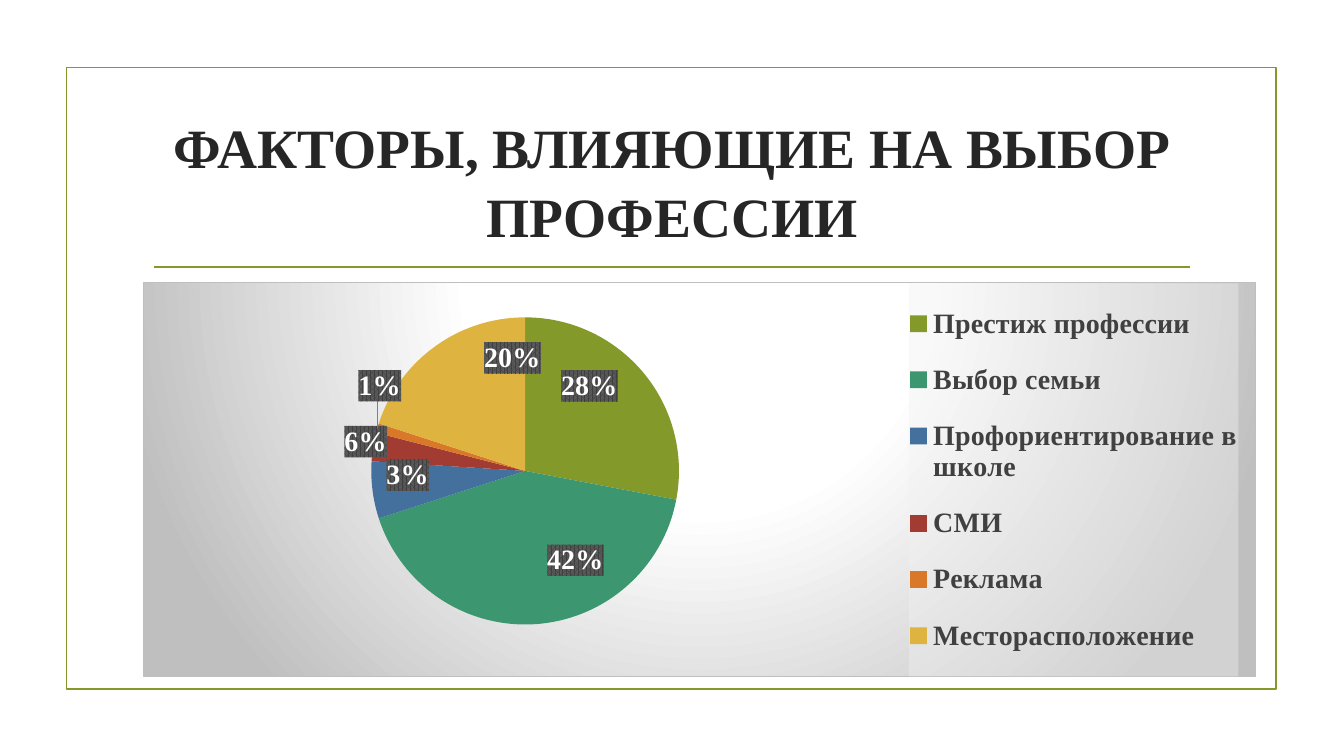
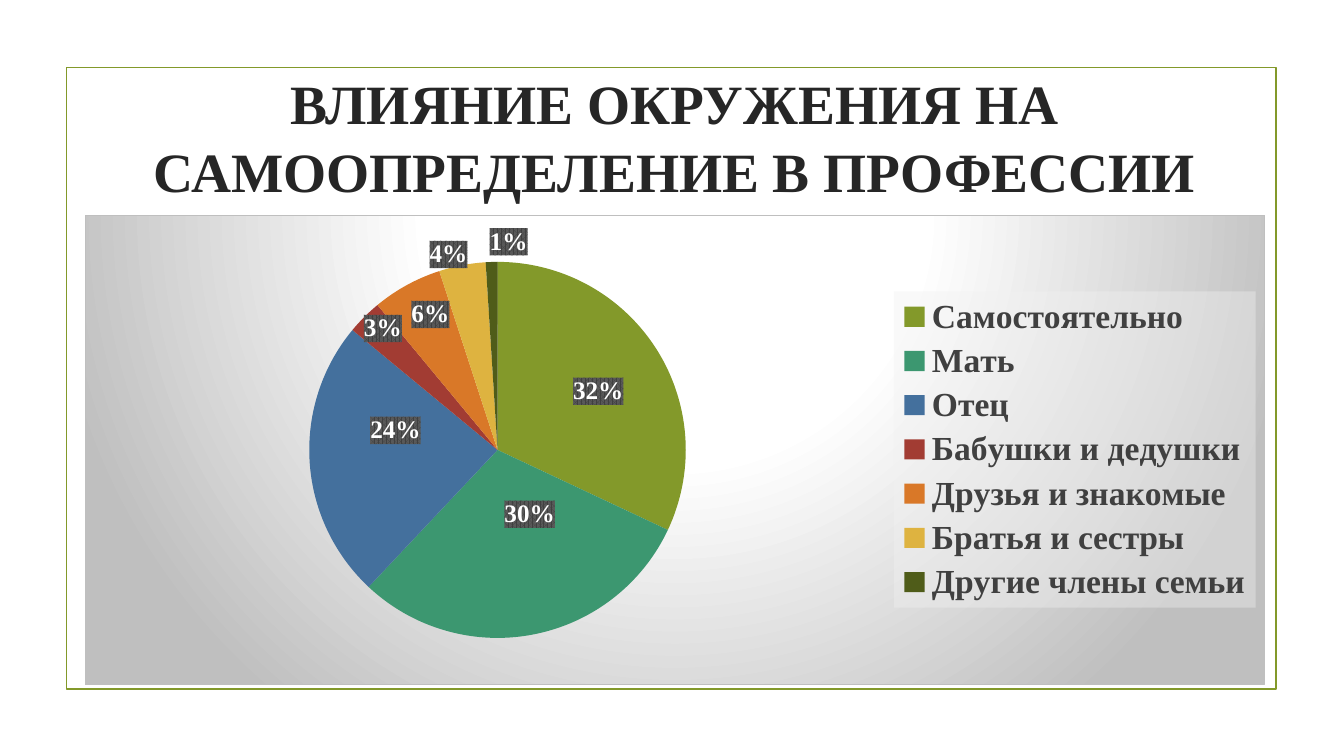
from dataclasses import dataclass
from math import cos, pi, sin

from pptx import Presentation
from pptx.chart.data import CategoryChartData
from pptx.dml.color import RGBColor
from pptx.enum.chart import XL_CHART_TYPE, XL_LEGEND_POSITION
from pptx.enum.shapes import MSO_CONNECTOR, MSO_SHAPE
from pptx.enum.text import MSO_ANCHOR, MSO_AUTO_SIZE, PP_ALIGN
from pptx.oxml import parse_xml
from pptx.oxml.ns import nsdecls, qn
from pptx.util import Pt


@dataclass(frozen=True)
class Theme:
    font: str = "Times New Roman"
    accent: str = "83992A"
    title_color: str = "262626"
    legend_color: str = "404040"
    chart_color: str = "000000"
    label_color: str = "FFFFFF"
    title_size: float = 39.6
    title_spacing: float = 1.03
    chart_size: float = 10
    line_width: float = 1.25
    slices: tuple = ("83992A", "3C9770", "44709D", "A23C33",
                     "D97828", "DEB340", "4F5C19")


# Fills that python-pptx has no public method for
PANEL_FILL = f"""<c:spPr {nsdecls('c', 'a')}>
  <a:gradFill rotWithShape="1"><a:gsLst>
    <a:gs pos="0"><a:srgbClr val="FFFFFF"/></a:gs>
    <a:gs pos="39000"><a:srgbClr val="FFFFFF"/></a:gs>
    <a:gs pos="100000"><a:srgbClr val="BFBFBF"/></a:gs></a:gsLst>
    <a:path path="circle">
      <a:fillToRect l="50000" t="-80000" r="50000" b="180000"/></a:path>
  </a:gradFill>
  <a:ln w="9525"><a:solidFill><a:srgbClr val="BFBFBF"/></a:solidFill></a:ln>
</c:spPr>"""
LEGEND_FILL = f"""<c:spPr {nsdecls('c', 'a')}>
  <a:solidFill><a:srgbClr val="F2F2F2"><a:alpha val="39000"/></a:srgbClr>
  </a:solidFill><a:ln><a:noFill/></a:ln></c:spPr>"""


def rgb(color):
    return RGBColor.from_string(color)


def set_font(font, name, size, color, bold=False):
    font.name, font.size, font.bold = name, Pt(size), bold
    font.color.rgb = rgb(color)


def area_layout(area, panel, target=""):
    """Place an area of the slide as fractions of the chart panel."""
    left, top, width, height = area
    x, y = (left - panel[0]) / panel[2], (top - panel[1]) / panel[3]
    return parse_xml(
        f'<c:layout {nsdecls("c")}><c:manualLayout>{target}'
        f'<c:xMode val="edge"/><c:yMode val="edge"/>'
        f'<c:x val="{x:.4f}"/><c:y val="{y:.4f}"/>'
        f'<c:w val="{width / panel[2]:.4f}"/><c:h val="{height / panel[3]:.4f}"/>'
        f'</c:manualLayout></c:layout>')


class Deck:
    def __init__(self, theme):
        self.theme = theme
        self.prs = Presentation()
        self.prs.slide_width, self.prs.slide_height = Pt(960), Pt(540)
        self.slide = None

    def add_slide(self):
        self.slide = self.prs.slides.add_slide(self.prs.slide_layouts[5])
        self.frame()

    def frame(self):
        border = self.slide.shapes.add_shape(
            MSO_SHAPE.RECTANGLE, Pt(47.5), Pt(48.2), Pt(864), Pt(444.2))
        border.shadow.inherit = False
        border.fill.background()
        border.line.color.rgb = rgb(self.theme.accent)
        border.line.width = Pt(self.theme.line_width)

    def title(self, text, left, top, width, height):
        title = self.slide.shapes.title
        title.left, title.top = Pt(left), Pt(top)
        title.width, title.height = Pt(width), Pt(height)
        title.text_frame.text = text
        title.text_frame.word_wrap = True
        title.text_frame.auto_size = MSO_AUTO_SIZE.NONE
        title.text_frame.vertical_anchor = MSO_ANCHOR.MIDDLE
        paragraph = title.text_frame.paragraphs[0]
        paragraph.alignment = PP_ALIGN.CENTER
        paragraph.line_spacing = self.theme.title_spacing
        set_font(paragraph.font, self.theme.font, self.theme.title_size,
                 self.theme.title_color, True)

    def rule(self, left, right, y):
        rule = self.slide.shapes.add_connector(
            MSO_CONNECTOR.STRAIGHT, Pt(left), Pt(y), Pt(right), Pt(y))
        rule.line.color.rgb = rgb(self.theme.accent)
        rule.line.width = Pt(self.theme.line_width)
        rule._element.spPr.append(parse_xml(f'<a:effectLst {nsdecls("a")}/>'))

    def pie(self, factors, panel, center, radius, legend_area,
            legend_size, label_size):
        """Each factor is a name, a value and its label's offset from the center."""
        theme = self.theme
        shares = CategoryChartData(number_format="General")
        shares.categories = [name for name, _, _ in factors]
        shares.add_series("Series 1", [value for _, value, _ in factors])
        chart = self.slide.shapes.add_chart(
            XL_CHART_TYPE.PIE, *map(Pt, panel), shares).chart
        chart.has_title = False
        set_font(chart.font, theme.font, theme.chart_size, theme.chart_color)
        chart._chartSpace.find(qn("c:txPr")).addprevious(parse_xml(PANEL_FILL))

        # Slices
        pie = chart.plots[0]
        pie.vary_by_categories = True
        series = pie.series[0]
        for index, color in enumerate(theme.slices[:len(factors)]):
            fill = series.points[index].format.fill
            fill.solid()
            fill.fore_color.rgb = rgb(color)
        plot_area = chart._chartSpace.chart.plotArea
        for layout in plot_area.findall(qn("c:layout")):
            plot_area.remove(layout)
        square = (center[0] - radius, center[1] - radius, 2 * radius, 2 * radius)
        plot_area.insert(0, area_layout(
            square, panel, '<c:layoutTarget val="inner"/>'))
        labels = self.pie_labels(factors, panel, radius, label_size)
        series._element.find(qn("c:cat")).addprevious(labels)

        # Legend
        chart.has_legend = True
        legend = chart.legend
        legend.position = XL_LEGEND_POSITION.RIGHT
        legend.include_in_layout = False
        set_font(legend.font, theme.font, legend_size, theme.legend_color, True)
        overlay = legend._element.find(qn("c:overlay"))
        overlay.addprevious(area_layout(legend_area, panel))
        overlay.addnext(parse_xml(LEGEND_FILL))

    def pie_labels(self, factors, panel, radius, size):
        """Percent labels, moved from the middle of each slice to their places."""
        theme = self.theme
        style = f"""<c:numFmt formatCode="0%" sourceLinked="0"/>
          <c:spPr><a:pattFill prst="pct75">
            <a:fgClr><a:srgbClr val="404040"/></a:fgClr>
            <a:bgClr><a:srgbClr val="595959"/></a:bgClr></a:pattFill>
            <a:ln><a:noFill/></a:ln></c:spPr>
          <c:txPr><a:bodyPr/><a:p><a:pPr><a:defRPr sz="{size * 100}" b="1">
            <a:solidFill><a:srgbClr val="{theme.label_color}"/></a:solidFill>
            <a:latin typeface="{theme.font}"/><a:cs typeface="{theme.font}"/>
            </a:defRPr></a:pPr><a:endParaRPr lang="ru-RU"/></a:p></c:txPr>
          <c:dLblPos val="ctr"/><c:showLegendKey val="0"/><c:showVal val="0"/>
          <c:showCatName val="0"/><c:showSerName val="0"/>
          <c:showPercent val="1"/><c:showBubbleSize val="0"/>"""
        total = sum(value for _, value, _ in factors)
        moved, before = "", 0
        for index, (_, value, (dx, dy)) in enumerate(factors):
            angle = 2 * pi * (before + value / 2) / total
            x = (dx - radius / 2 * sin(angle)) / panel[2]
            y = (dy + radius / 2 * cos(angle)) / panel[3]
            moved += (f'<c:dLbl><c:idx val="{index}"/><c:layout><c:manualLayout>'
                      f'<c:x val="{x:.4f}"/><c:y val="{y:.4f}"/>'
                      f'</c:manualLayout></c:layout>{style}</c:dLbl>')
            before += value
        return parse_xml(
            f'<c:dLbls {nsdecls("c", "a")}>{moved}{style}'
            '<c:showLeaderLines val="1"/><c:leaderLines><c:spPr><a:ln w="9525">'
            '<a:solidFill><a:srgbClr val="808080"/></a:solidFill></a:ln></c:spPr>'
            '</c:leaderLines></c:dLbls>')


def main():
    deck = Deck(Theme())

    # Factors behind the choice of profession
    deck.add_slide()
    deck.title("ФАКТОРЫ, ВЛИЯЮЩИЕ НА ВЫБОР ПРОФЕССИИ", 102.2, 77, 756, 103)
    deck.rule(110.2, 850.3, 190.8)
    deck.pie(
        [("Престиж профессии", 28, (46, -61)),
         ("Выбор семьи", 42, (36, 64)),
         ("Профориентирование в школе", 6, (-114, -21)),
         ("СМИ", 3, (-84, 3)),
         ("Реклама", 1, (-104, -61)),
         ("Месторасположение", 20, (-9, -81))],
        panel=(102.2, 201.6, 794.9, 282.2), center=(375, 336.4), radius=110,
        legend_area=(649.3, 202, 235.7, 281.5), legend_size=20, label_size=20)

    # Influence of other people
    deck.add_slide()
    deck.title("ВЛИЯНИЕ ОКРУЖЕНИЯ НА САМООПРЕДЕЛЕНИЕ В ПРОФЕССИИ",
               60.5, 54.7, 843.1, 84.2)
    deck.pie(
        [("Самостоятельно", 32, (72, -42)),
         ("Мать", 30, (23, 46)),
         ("Отец", 24, (-73, -14)),
         ("Бабушки и дедушки", 3, (-82, -87)),
         ("Друзья и знакомые", 6, (-48, -97)),
         ("Братья и сестры", 4, (-35, -140)),
         ("Другие члены семьи", 1, (8, -149))],
        panel=(60.5, 153.4, 843.1, 336.2), center=(355.3, 321.4), radius=134.6,
        legend_area=(638.6, 207.9, 258.6, 226.4), legend_size=24, label_size=18)

    deck.prs.save("out.pptx")


if __name__ == "__main__":
    main()
